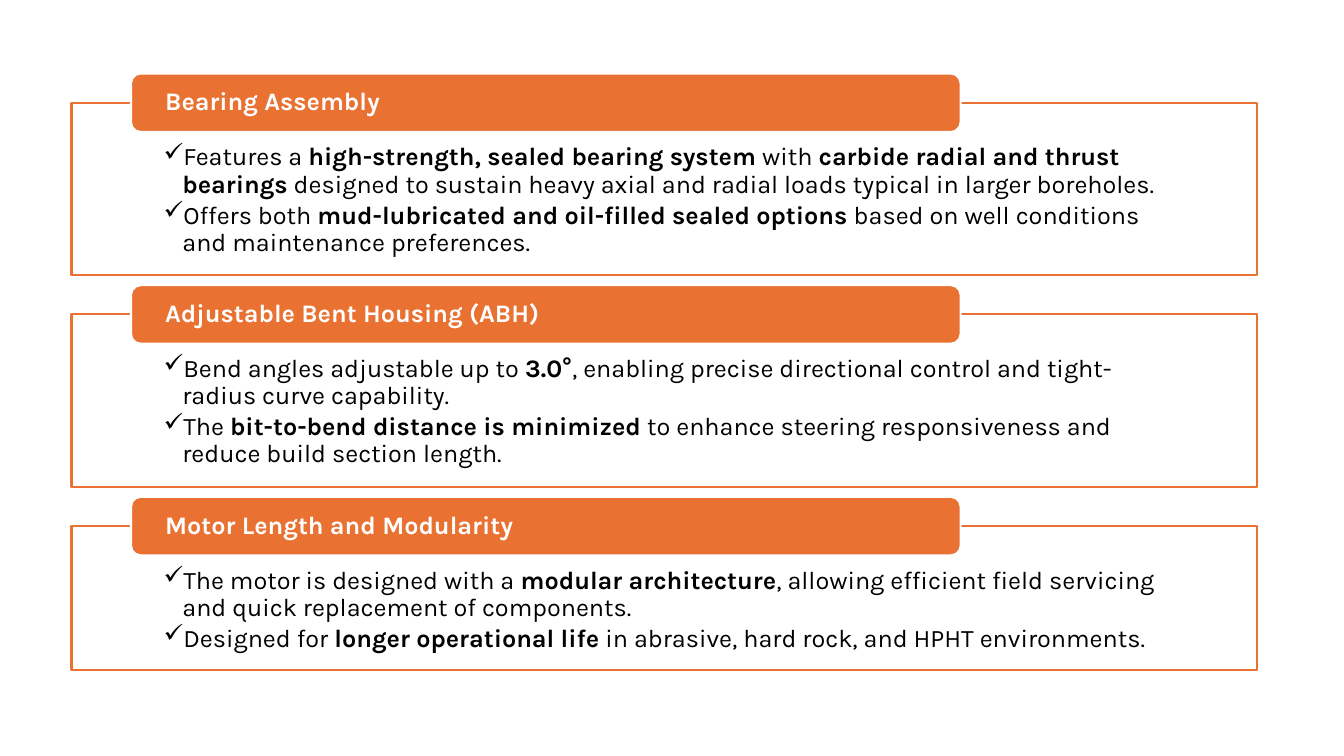
from dataclasses import dataclass

from lxml.etree import SubElement
from pptx import Presentation
from pptx.dml.color import RGBColor
from pptx.enum.shapes import MSO_SHAPE
from pptx.enum.text import MSO_ANCHOR, PP_ALIGN
from pptx.oxml.ns import qn
from pptx.shapes.autoshape import Shape
from pptx.slide import Slide
from pptx.text.text import TextFrame, _Paragraph
from pptx.util import Pt

ORANGE, WHITE, BLACK = "E97132", "FFFFFF", "000000"
FONT, FONT_SIZE = "Karla", 18
BOX_LEFT, BOX_WIDTH = 51.1, 846.7
FIRST_TOP, BOX_GAP = 73.4, 28.1
HEADING_LEFT, HEADING_WIDTH, HEADING_HEIGHT = 93.6, 592.6, 41.8
BULLET_INDENT = 13.5


@dataclass
class Section:
    """A heading and its bullets; asterisks enclose the bold words."""
    heading: str
    bullets: list[str]
    height: float


SECTIONS = [
    Section("Bearing Assembly", [
        "Features a *high-strength, sealed bearing system* with *carbide radial and thrust bearings*"
        " designed to sustain heavy axial and radial loads typical in larger boreholes.",
        "Offers both *mud-lubricated and oil-filled sealed options* based on well conditions"
        " and maintenance preferences.",
    ], 123.1),
    Section("Adjustable Bent Housing (ABH)", [
        "Bend angles adjustable up to *3.0°*, enabling precise directional control"
        " and tight-radius curve capability.",
        "The *bit-to-bend distance is minimized* to enhance steering responsiveness"
        " and reduce build section length.",
    ], 123.1),
    Section("Motor Length and Modularity", [
        "The motor is designed with a *modular architecture*, allowing efficient field servicing"
        " and quick replacement of components.",
        "Designed for *longer operational life* in abrasive, hard rock, and HPHT environments.",
    ], 103),
]


def rgb(color: str) -> RGBColor:
    return RGBColor.from_string(color)


def add_box(s: Slide, kind: MSO_SHAPE, left: float, top: float, width: float,
            height: float, fill: str, line: str) -> Shape:
    sp = s.shapes.add_shape(kind, Pt(left), Pt(top), Pt(width), Pt(height))
    sp.shadow.inherit = False
    sp.fill.solid()
    sp.fill.fore_color.rgb = rgb(fill)
    sp.line.color.rgb = rgb(line)
    sp.line.width = Pt(1.5)
    return sp


def set_frame(tf: TextFrame, side: float, top: float, bottom: float, anchor: MSO_ANCHOR) -> None:
    tf.word_wrap = True
    tf.margin_left = tf.margin_right = Pt(side)
    tf.margin_top, tf.margin_bottom = Pt(top), Pt(bottom)
    tf.vertical_anchor = anchor


def add_runs(p: _Paragraph, text: str, color: str) -> None:
    """Write the text run by run, bold between asterisks."""
    p.alignment = PP_ALIGN.LEFT
    p.line_spacing = 0.9
    for i, part in enumerate(text.split("*")):
        if part:
            r = p.add_run()
            r.text = part
            r.font.name, r.font.size = FONT, Pt(FONT_SIZE)
            r.font.bold = i % 2 == 1
            r.font.color.rgb = rgb(color)


def add_check_bullet(p: _Paragraph) -> None:
    p.space_after = Pt(0.15 * FONT_SIZE)
    pPr = p._p.get_or_add_pPr()
    pPr.set("marL", str(Pt(BULLET_INDENT)))
    pPr.set("indent", str(-Pt(BULLET_INDENT)))
    SubElement(pPr, qn("a:buChar"), char="✓")


def add_section(s: Slide, section: Section, top: float) -> None:
    body = add_box(s, MSO_SHAPE.RECTANGLE, BOX_LEFT, top, BOX_WIDTH, section.height, WHITE, ORANGE)
    fill_color = body.fill._xPr.find(qn("a:solidFill"))[0]
    SubElement(fill_color, qn("a:alpha"), val="90000")
    tf = body.text_frame
    set_frame(tf, 65.7, 29.5, 10, MSO_ANCHOR.TOP)
    for i, bullet in enumerate(section.bullets):
        p = tf.add_paragraph() if i else tf.paragraphs[0]
        add_runs(p, bullet, BLACK)
        add_check_bullet(p)

    heading = add_box(s, MSO_SHAPE.ROUNDED_RECTANGLE, HEADING_LEFT, top - HEADING_HEIGHT / 2,
                      HEADING_WIDTH, HEADING_HEIGHT, ORANGE, WHITE)
    set_frame(heading.text_frame, 22.4, 0, 0, MSO_ANCHOR.MIDDLE)
    add_runs(heading.text_frame.paragraphs[0], f"*{section.heading}*", WHITE)


def main() -> None:
    prs = Presentation()
    prs.slide_width, prs.slide_height = Pt(960), Pt(540)
    s = prs.slides.add_slide(prs.slide_layouts.get_by_name("Blank"))
    top = FIRST_TOP
    for section in SECTIONS:
        add_section(s, section, top)
        top += section.height + BOX_GAP
    prs.save("out.pptx")


if __name__ == "__main__":
    main()
